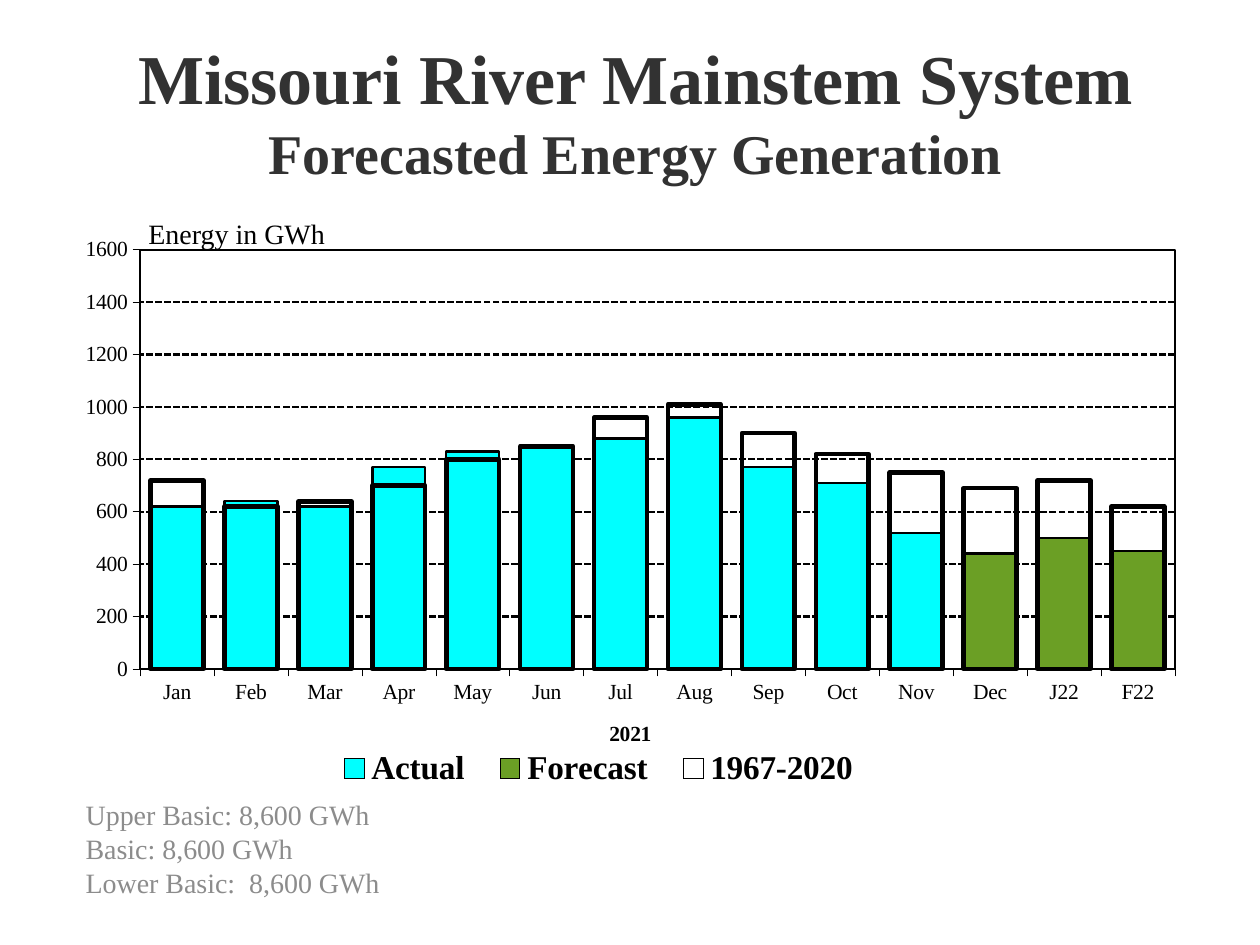
from copy import deepcopy
from dataclasses import dataclass

from lxml.etree import SubElement
from pptx import Presentation
from pptx.chart.data import CategoryChartData as ChartData
from pptx.dml.color import RGBColor as Rgb
from pptx.enum.chart import XL_CHART_TYPE as Kind
from pptx.enum.chart import XL_LEGEND_POSITION as Side
from pptx.enum.chart import XL_TICK_MARK as Tick
from pptx.enum.dml import MSO_LINE as Dash
from pptx.enum.text import MSO_ANCHOR as Anchor
from pptx.enum.text import PP_ALIGN as Align
from pptx.oxml import parse_xml
from pptx.oxml.ns import nsdecls, qn
from pptx.util import Inches, Pt


@dataclass(frozen=True)
class Theme:
    font: str = "Times New Roman"
    title: str = "323232"
    note: str = "8C8C8C"
    ink: str = "000000"
    paper: str = "FFFFFF"
    actual: str = "00FFFF"
    cast: str = "6B9F25"
    head: float = 40
    sub: float = 32
    body: float = 16
    axis: float = 12.3
    key: float = 19
    thin: float = 0.32
    line: float = 1.29
    thick: float = 2.58


THEME = Theme()
TOP = 1600
MONTHS = ["Jan", "Feb", "Mar", "Apr", "May", "Jun", "Jul", "Aug", "Sep",
          "Oct", "Nov", "Dec", "J22", "F22"]
ACTUAL = [620, 640, 620, 770, 830, 850, 880, 960, 770, 710, 520]
CAST = [440, 500, 450]
MEAN = [720, 620, 640, 700, 800, 850, 960, 1010, 900, 820, 750, 690, 720, 620]
NOTES = ["Upper Basic: 8,600 GWh", "Basic: 8,600 GWh",
         "Lower Basic:  8,600 GWh"]


def style(font, size, color=THEME.ink, bold=False):
    font.name, font.size, font.bold = THEME.font, Pt(size), bold
    font.color.rgb = Rgb.from_string(color)


def add_run(para, text, size, color, bold=False):
    run = para.add_run()
    run.text = text
    style(run.font, size, color, bold)


def place(shape, left, top, width, height):
    shape.left, shape.top = Inches(left), Inches(top)
    shape.width, shape.height = Inches(width), Inches(height)


def add_title(shape):
    place(shape, 0.42, 0.17, 9.25, 1.61)
    frame = shape.text_frame
    frame.vertical_anchor = Anchor.TOP
    frame.margin_top = Inches(0.1)
    para = frame.paragraphs[0]
    para.alignment = Align.CENTER
    add_run(para, "Missouri River Mainstem System", THEME.head, THEME.title, True)
    para.add_line_break()
    add_run(para, "Forecasted Energy Generation", THEME.sub, THEME.title, True)


def add_notes(shape):
    place(shape, 0.58, 6.33, 2.75, 1)
    frame = shape.text_frame
    frame.vertical_anchor = Anchor.TOP
    for i, text in enumerate(NOTES):
        para = frame.add_paragraph() if i else frame.paragraphs[0]
        para.alignment = Align.LEFT
        para.line_spacing = 0.8
        para.space_before = Pt(4 if i else 0)
        add_run(para, text, THEME.body, THEME.note)


def add_unit(slide):
    box = slide.shapes.add_textbox(
        Inches(1.08), Inches(1.67), Inches(2.08), Inches(0.37))
    box.text_frame.word_wrap = True
    add_run(box.text_frame.paragraphs[0], "Energy in GWh", THEME.body, THEME.ink)


def set_line(line, width):
    line.color.rgb = Rgb.from_string(THEME.ink)
    line.width = Pt(width)


def set_layout(parent, index, x, y, w, h, inner=False):
    """Fix the place of a chart part, in shares of the chart's size."""
    for old in parent.findall(qn("c:layout")):
        parent.remove(old)
    layout = parent.makeelement(qn("c:layout"), {})
    parent.insert(index, layout)
    box = SubElement(layout, qn("c:manualLayout"))
    rules = [("layoutTarget", "inner")] if inner else []
    rules += [("xMode", "edge"), ("yMode", "edge"),
              ("x", x), ("y", y), ("w", w), ("h", h)]
    for name, val in rules:
        SubElement(box, qn(f"c:{name}"), val=str(val))


def format_axis(axis):
    axis.major_tick_mark, axis.minor_tick_mark = Tick.OUTSIDE, Tick.NONE
    style(axis.tick_labels.font, THEME.axis)
    set_line(axis.format.line, THEME.thin)


def format_axes(chart):
    months, energy = chart.category_axis, chart.value_axis
    format_axis(months)
    format_axis(energy)
    para = months.axis_title.text_frame.paragraphs[0]
    add_run(para, "2021", THEME.axis, THEME.ink, True)
    energy.minimum_scale, energy.maximum_scale = 0, TOP
    energy.major_unit = 200
    energy.has_major_gridlines = True
    grid = energy.major_gridlines.format.line
    set_line(grid, THEME.line)
    grid.dash_style = Dash.SQUARE_DOT


def format_bars(plot):
    plot.gap_width, plot.overlap = 40, 100
    plot.vary_by_categories = False
    looks = [(THEME.actual, THEME.line), (THEME.cast, THEME.line),
             (None, THEME.thick)]
    for bars, (color, width) in zip(plot.series, looks):
        if color:
            bars.format.fill.solid()
            bars.format.fill.fore_color.rgb = Rgb.from_string(color)
        else:
            bars.format.fill.background()
        set_line(bars.format.line, width)


def split_mean(area):
    """Move the last series to hidden second axes, in front of the others."""
    first = area.find(qn("c:barChart"))
    second = deepcopy(first)
    first.remove(first.findall(qn("c:ser"))[-1])
    for bars in second.findall(qn("c:ser"))[:-1]:
        second.remove(bars)
    first.addnext(second)
    ids = {}
    for i, node in enumerate(second.findall(qn("c:axId"))):
        ids[node.get("val")] = str(5001 + i)
        node.set("val", str(5001 + i))
    last = area.find(qn("c:valAx"))
    for tag in ("c:valAx", "c:catAx"):
        axis = deepcopy(area.find(qn(tag)))
        for name in ("c:axId", "c:crossAx"):
            node = axis.find(qn(name))
            node.set("val", ids[node.get("val")])
        for name in ("c:majorGridlines", "c:title"):
            for node in axis.findall(qn(name)):
                axis.remove(node)
        axis.find(qn("c:delete")).set("val", "1")
        if tag == "c:valAx":
            axis.find(qn("c:axPos")).set("val", "r")
            axis.find(qn("c:crosses")).set("val", "max")
        last.addnext(axis)
        last = axis


def frame_plot(area):
    set_layout(area, 0, 0.059, 0.095, 0.928, 0.655, inner=True)
    area.append(parse_xml(
        f'<c:spPr {nsdecls("c", "a")}><a:solidFill><a:srgbClr val="{THEME.paper}"/>'
        f'</a:solidFill><a:ln w="{Pt(THEME.line)}"><a:solidFill>'
        f'<a:srgbClr val="{THEME.ink}"/></a:solidFill></a:ln></c:spPr>'))


def add_legend(chart):
    chart.has_legend = True
    legend = chart.legend
    legend.position = Side.BOTTOM
    legend.include_in_layout = False
    style(legend.font, THEME.key, bold=True)
    set_layout(legend._element, 1, 0.22, 0.87, 0.5, 0.07)


def add_energy(slide):
    data = ChartData()
    data.categories = MONTHS
    data.add_series("Actual", ACTUAL + [None] * len(CAST))
    data.add_series("Forecast", [None] * len(ACTUAL) + CAST)
    data.add_series("1967-2020", MEAN)
    chart = slide.shapes.add_chart(
        Kind.COLUMN_CLUSTERED, Inches(0.59), Inches(1.5), Inches(8.85),
        Inches(5.08), data).chart
    chart.has_title = False
    style(chart.font, THEME.axis)
    format_axes(chart)
    format_bars(chart.plots[0])
    add_legend(chart)
    area = chart.plots[0]._element.getparent()
    split_mean(area)
    frame_plot(area)


def main():
    deck = Presentation()
    deck.slide_width, deck.slide_height = Inches(10), Inches(7.5)
    slide = deck.slides.add_slide(deck.slide_layouts[0])
    add_title(slide.shapes.title)
    add_notes(slide.placeholders[1])
    add_energy(slide)
    add_unit(slide)
    deck.save("out.pptx")


if __name__ == "__main__":
    main()
